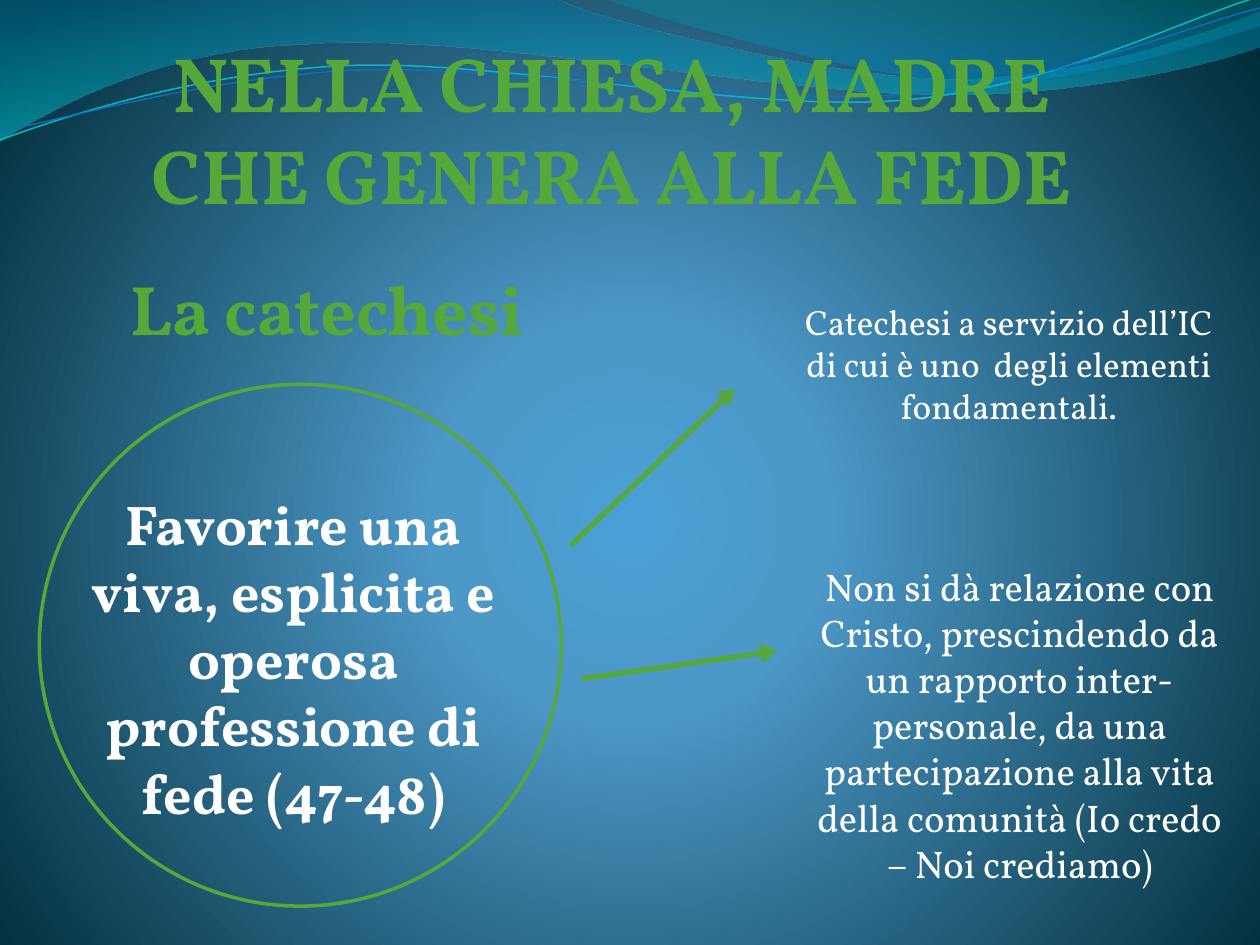
from dataclasses import dataclass

import pptx
import pptx.dml.color
import pptx.enum.shapes
import pptx.enum.text
import pptx.oxml
import pptx.oxml.ns
import pptx.util
from lxml import etree

Pt = pptx.util.Pt
qn = pptx.oxml.ns.qn
GREEN = "55A839"
WHITE = "FFFFFF"
FONT = "Vollkorn"


@dataclass
class Stop:
    position: int
    color: str
    opacity: int = 100


@dataclass
class Wave:
    start: tuple
    segments: list  # 2 numbers: straight to a point; 6 numbers: cubic curve
    stops: tuple = ()
    line_color: str = ""
    line_width: float = 0
    rotation: float = 0


@dataclass
class Label:
    text: str
    box: tuple
    size: float
    color: str = WHITE
    bold: bool = False
    wrap: bool = True


@dataclass
class Arrow:
    start: tuple
    end: tuple


@dataclass
class Circle:
    left: float
    top: float
    diameter: float


WAVES = [
    Wave((0, 0), [(317, -1), (343, 12, 478, 45, 546, 45), (614, 45, 690, 19, 720, 6.5),
                  (721, 26), (708, 32, 626, 55, 537, 54), (448, 54, 275, 20, 185, 24.5),
                  (93, 26, 33, 60, -1, 81)],
         stops=(Stop(0, "0074A1", 45), Stop(100, "00C6CF", 55))),
    Wave((345, -1), [(367, 8, 491, 45, 554, 47), (616, 50, 692, 23, 720, 15), (720, 0)],
         stops=(Stop(0, "00A1A9", 30), Stop(80, "008BBF", 45))),
    Wave((-1.4, 63), [(34.2, 51.7, 114.3, 29.4, 199.4, 29.9),
                      (284.4, 30.5, 425.8, 67.2, 512, 64.7),
                      (599.2, 62.3, 676.1, 25.9, 720.1, 15.4)],
         line_color="0AB8BF", line_width=0.85, rotation=357.3),
    Wave((-1.1, 58), [(33.1, 53.6, 118.2, 32.6, 204.3, 32.7),
                      (290.3, 33.7, 429.1, 63.8, 515.3, 61.4),
                      (601.5, 59.4, 678.9, 30, 721.4, 21.5)],
         line_color="0F6FC6", line_width=0.75, rotation=357.3),
]

# From back to front
CONTENT = [
    Label("NELLA CHIESA, MADRE CHE GENERA ALLA FEDE", (56, 16.8, 587.5, 114), 44, GREEN, True),
    Circle(22.5, 219.6, 298.2),
    Label("Favorire una viva, esplicita e operosa professione di fede (47-48)",
          (29.8, 276, 276, 201), 32, bold=True),
    Arrow((326, 312), (420, 222)),
    Label("Catechesi a servizio dell’IC di cui è uno  degli elementi fondamentali.",
          (449.8, 168, 253.5, 80), 20),
    Arrow((332, 388), (444, 372)),
    Label("Non si dà relazione con Cristo, prescindendo da un rapporto inter-personale, "
          "da una partecipazione alla vita della comunità (Io credo – Noi crediamo)",
          (455.8, 318, 253.5, 194), 22),
    Label("La catechesi", (63.5, 148, 247, 55.5), 40, GREEN, True, wrap=False),
]


def rgb(color: str) -> pptx.dml.color.RGBColor:
    return pptx.dml.color.RGBColor.from_string(color)


def set_gradient(properties, stops: tuple, direction: str) -> None:
    """Put a gradient in place of the solid fill of a properties element."""
    stop_xml = ""
    for stop in stops:
        alpha = f'<a:alpha val="{stop.opacity * 1000}"/>' if stop.opacity < 100 else ""
        stop_xml += (f'<a:gs pos="{stop.position * 1000}">'
                     f'<a:srgbClr val="{stop.color}">{alpha}</a:srgbClr></a:gs>')
    gradient = pptx.oxml.parse_xml(
        f'<a:gradFill {pptx.oxml.ns.nsdecls("a")} rotWithShape="1">'
        f"<a:gsLst>{stop_xml}</a:gsLst>{direction}</a:gradFill>")
    properties.replace(properties.find(qn("a:solidFill")), gradient)


def bend_segments(shape, segments: list) -> None:
    """Turn the straight segments that have control points into cubic curves."""
    lines = list(shape.element.spPr.iter(qn("a:lnTo")))
    for line, segment in zip(lines, segments):
        if len(segment) == 2:
            continue
        curve = etree.Element(qn("a:cubicBezTo"))
        for x, y in zip(segment[::2], segment[1::2]):
            etree.SubElement(curve, qn("a:pt"),
                             x=str(Pt(x) - shape.left), y=str(Pt(y) - shape.top))
        line.getparent().replace(line, curve)


def draw_wave(slide, wave: Wave) -> None:
    builder = slide.shapes.build_freeform(*map(Pt, wave.start))
    ends = [tuple(map(Pt, segment[-2:])) for segment in wave.segments]
    builder.add_line_segments(ends, close=bool(wave.stops))
    shape = builder.convert_to_shape()
    bend_segments(shape, wave.segments)
    shape.rotation = wave.rotation
    shape.shadow.inherit = False
    if wave.stops:
        shape.fill.solid()
        set_gradient(shape.element.spPr, wave.stops, '<a:lin ang="5400000" scaled="0"/>')
        shape.line.fill.background()
    else:
        shape.fill.background()
        shape.line.color.rgb = rgb(wave.line_color)
        shape.line.width = Pt(wave.line_width)


def draw_label(slide, label: Label) -> None:
    shape = slide.shapes.add_textbox(*map(Pt, label.box))
    frame = shape.text_frame
    frame.word_wrap = label.wrap
    frame.auto_size = pptx.enum.text.MSO_AUTO_SIZE.SHAPE_TO_FIT_TEXT
    paragraph = frame.paragraphs[0]
    paragraph.text = label.text
    paragraph.alignment = pptx.enum.text.PP_ALIGN.CENTER
    paragraph.font.name = FONT
    paragraph.font.size = Pt(label.size)
    paragraph.font.bold = label.bold
    paragraph.font.color.rgb = rgb(label.color)


def draw_arrow(slide, arrow: Arrow) -> None:
    connector = slide.shapes.add_connector(
        pptx.enum.shapes.MSO_CONNECTOR.STRAIGHT, *map(Pt, arrow.start + arrow.end))
    connector.line.color.rgb = rgb(GREEN)
    connector.line.width = Pt(3)
    properties = connector.element.spPr
    etree.SubElement(properties.find(qn("a:ln")), qn("a:tailEnd"), type="arrow")
    etree.SubElement(properties, qn("a:effectLst"))


def draw_circle(slide, circle: Circle) -> None:
    shape = slide.shapes.add_shape(
        pptx.enum.shapes.MSO_SHAPE.OVAL, Pt(circle.left), Pt(circle.top),
        Pt(circle.diameter), Pt(circle.diameter))
    shape.shadow.inherit = False
    shape.fill.background()
    shape.line.color.rgb = rgb(GREEN)
    shape.line.width = Pt(2)


def main() -> None:
    presentation = pptx.Presentation()
    presentation.slide_width, presentation.slide_height = Pt(720), Pt(540)
    slide = presentation.slides.add_slide(presentation.slide_layouts[6])

    # Background glow
    slide.background.fill.solid()
    set_gradient(
        slide.element.find(".//" + qn("p:bgPr")),
        (Stop(0, "4AA0D6"), Stop(25, "4C98C7"), Stop(100, "002C38")),
        '<a:path path="circle"><a:fillToRect l="10000" t="110000" r="10000" b="100000"/></a:path>')

    # Waves along the top
    for wave in WAVES:
        draw_wave(slide, wave)

    # Texts, circle and arrows
    painters = {Label: draw_label, Circle: draw_circle, Arrow: draw_arrow}
    for item in CONTENT:
        painters[type(item)](slide, item)

    presentation.save("out.pptx")


if __name__ == "__main__":
    main()
